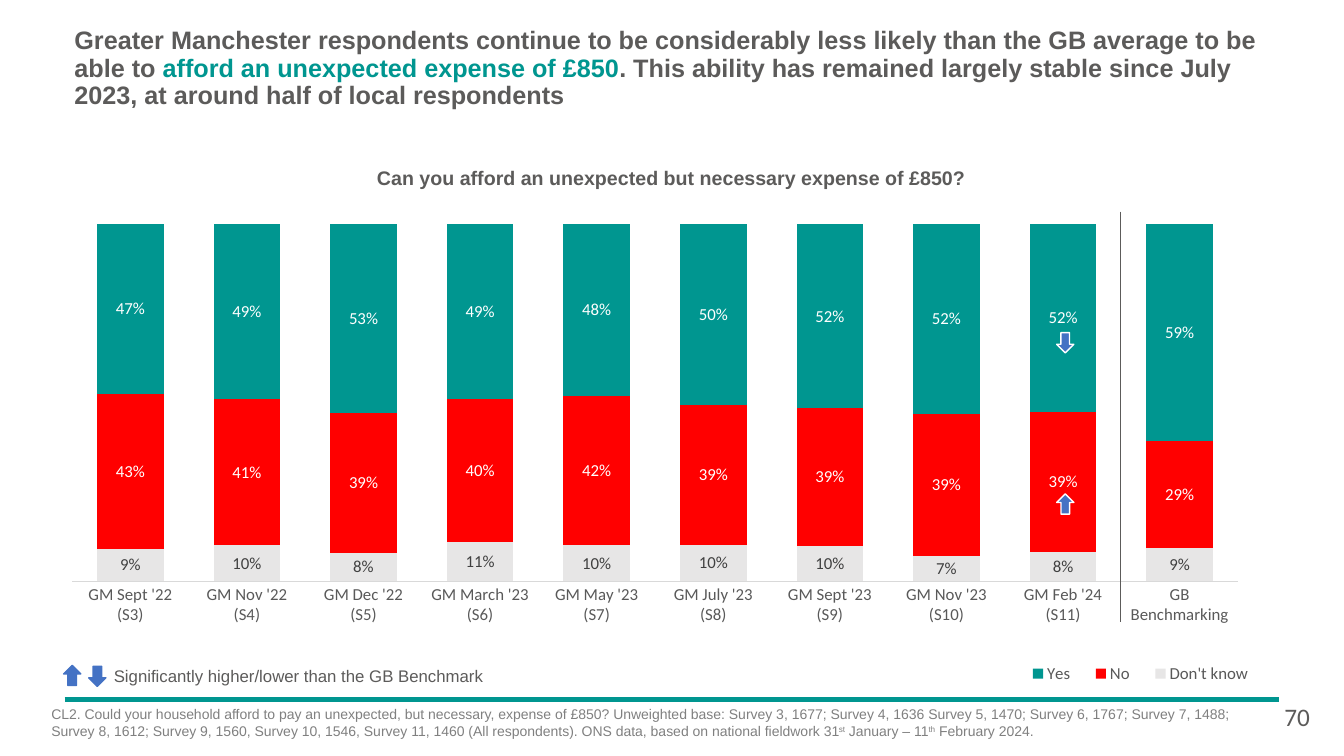
from lxml import etree
from pptx import Presentation
from pptx.chart.data import CategoryChartData
from pptx.dml.color import RGBColor
from pptx.enum.chart import XL_CHART_TYPE, XL_LABEL_POSITION, XL_LEGEND_POSITION, XL_TICK_MARK
from pptx.enum.shapes import MSO_CONNECTOR, MSO_SHAPE
from pptx.enum.text import MSO_ANCHOR, PP_ALIGN
from pptx.oxml import parse_xml
from pptx.oxml.ns import qn
from pptx.util import Inches, Pt

STACKED = XL_CHART_TYPE.COLUMN_STACKED_100
LABEL_CENTER = XL_LABEL_POSITION.CENTER
LEGEND_LEFT = XL_LEGEND_POSITION.LEFT
NO_TICK = XL_TICK_MARK.NONE
STRAIGHT = MSO_CONNECTOR.STRAIGHT
DOWN_ARROW = MSO_SHAPE.DOWN_ARROW
TOP, MIDDLE = MSO_ANCHOR.TOP, MSO_ANCHOR.MIDDLE
LEFT, CENTER = PP_ALIGN.LEFT, PP_ALIGN.CENTER

HEX = {"teal": "009690", "red": "FF0000", "pale": "E7E6E6", "text": "5C5B5A",
       "axis text": "595959", "axis line": "D9D9D9", "dark": "404040",
       "note": "808080", "blue": "4472C4", "white": "FFFFFF"}
COLOR = {name: RGBColor.from_string(value) for name, value in HEX.items()}

prs = Presentation()
prs.slide_width, prs.slide_height = Inches(13.33), Inches(7.5)
slide = prs.slides.add_slide(prs.slide_layouts[6])
shapes = slide.shapes


def share(*percents):
    """Turn alternating x and y percentages of the slide into lengths."""
    sides = (prs.slide_width, prs.slide_height)
    return [int(sides[i % 2] * p / 100) for i, p in enumerate(percents)]


def add_text(area, runs, size, font="Arial", bold=False, align=LEFT,
             anchor=TOP, wrap=True, inset=True, spacing=None):
    """Add a text box; each run is (text, colour name, raised)."""
    frame = shapes.add_textbox(*share(*area)).text_frame
    frame.word_wrap, frame.vertical_anchor = wrap, anchor
    if not inset:
        for side in ("left", "right", "top", "bottom"):
            setattr(frame, f"margin_{side}", 0)
    paragraph = frame.paragraphs[0]
    paragraph.alignment, paragraph.line_spacing = align, spacing
    for text, color, raised in runs:
        run = paragraph.add_run()
        run.text = text
        for key, value in {"name": font, "size": Pt(size), "bold": bold}.items():
            setattr(run.font, key, value)
        run.font.color.rgb = COLOR[color]
        if raised:
            run._r.get_or_add_rPr().set("baseline", "30000")


# Headline and chart question
add_text((4.8, 3.33, 92.42, 11.6), [
    ("Greater Manchester respondents continue to be considerably less likely than "
     "the GB average to be able to ", "text", False),
    ("afford an unexpected expense of £850", "teal", False),
    (". This ability has remained largely stable since July 2023, at around half "
     "of local respondents", "text", False),
], 18, bold=True, anchor=MIDDLE, spacing=0.9)
add_text((13.65, 22, 72.62, 3.2),
         [("Can you afford an unexpected but necessary expense of £850?", "text", False)],
         14, bold=True, align=CENTER, inset=False)

# Stacked chart of answers per survey
waves = ["Sept '22", "Nov '22", "Dec '22", "March '23", "May '23",
         "July '23", "Sept '23", "Nov '23", "Feb '24"]
answers = [
    ("Don't know", "pale", "dark", [9, 10, 8, 11, 10, 10, 10, 7, 8, 9]),
    ("No", "red", "white", [43, 41, 39, 40, 42, 39, 39, 39, 39, 29]),
    ("Yes", "teal", "white", [47, 49, 53, 49, 48, 50, 52, 52, 52, 59]),
]
data = CategoryChartData(number_format="0%")
data.categories = [f"GM {wave}\n(S{number})" for number, wave in enumerate(waves, 3)] + ["GB Benchmarking"]
for answer, _, _, percents in answers:
    data.add_series(answer, [percent / 100 for percent in percents])
chart = shapes.add_chart(STACKED, *share(4.73, 28, 90.55, 64.67), data).chart
chart.has_title = False
chart.font.name, chart.font.size = "Calibri", Pt(10)

plot = chart.plots[0]
plot.gap_width, plot.overlap, plot.vary_by_categories = 75, 100, False
label_format = {"show_value": True, "number_format": "0%",
                "number_format_is_linked": False, "position": LABEL_CENTER}
for series, (_, fill, label_color, _) in zip(plot.series, answers):
    series.format.fill.solid()
    series.format.fill.fore_color.rgb = COLOR[fill]
    labels = series.data_labels
    for key, value in label_format.items():
        setattr(labels, key, value)
    labels.font.name, labels.font.size = "Calibri", Pt(12)
    labels.font.color.rgb = COLOR[label_color]

# Axes and legend
survey_axis, share_axis = chart.category_axis, chart.value_axis
survey_axis.major_tick_mark = survey_axis.minor_tick_mark = NO_TICK
survey_axis.format.line.color.rgb = COLOR["axis line"]
survey_axis.format.line.width = Pt(0.75)
share_axis.visible = share_axis.has_major_gridlines = False
share_axis.minimum_scale, share_axis.maximum_scale = 0, 1
chart.has_legend = True
legend = chart.legend
legend.position, legend.include_in_layout = LEGEND_LEFT, False
for font in (survey_axis.tick_labels.font, legend.font):
    font.name, font.size = "Calibri", Pt(12)
    font.color.rgb = COLOR["axis text"]

# Fixed places for plot area and legend, as shares of the chart
CHART_NS = "http://schemas.openxmlformats.org/drawingml/2006/chart"
plot_area = chart._chartSpace.find(".//" + qn("c:plotArea"))
legend_key = chart._chartSpace.find(".//" + qn("c:legend"))
for part, target, box in ((plot_area, '<c:layoutTarget val="inner"/>', (0.007, 0.026, 0.958, 0.73)),
                          (legend_key, "", (0.78, 0.91, 0.21, 0.07))):
    for old in part.findall(qn("c:layout")):
        part.remove(old)
    sizes = "".join(f'<c:{tag} val="{value}"/>' for tag, value in zip("xywh", box))
    layout = parse_xml(f'<c:layout xmlns:c="{CHART_NS}"><c:manualLayout>{target}'
                       f'<c:xMode val="edge"/><c:yMode val="edge"/>{sizes}'
                       '</c:manualLayout></c:layout>')
    part.insert(0 if part is plot_area else 1, layout)

# Arrows: key below the chart, then marks on the latest survey
for x, y, turn, outline in ((6.6, 88.13, 0, "blue"), (4.73, 88, 180, "blue"),
                            (78.62, 44, 0, "white"), (78.62, 65.33, 180, "white")):
    arrow = shapes.add_shape(DOWN_ARROW, *share(x, y, 1.28, 2.67))
    arrow.rotation, arrow.shadow.inherit = turn, False
    arrow.fill.solid()
    arrow.fill.fore_color.rgb = COLOR["blue"]
    arrow.line.color.rgb, arrow.line.width = COLOR[outline], Pt(1)
add_text((7.73, 87.47, 29.26, 4),
         [("Significantly higher/lower than the GB Benchmark", "text", False)], 12, wrap=False)

# Footer rule and divider before the benchmark
for ends, color, width in (((4.8, 92.53, 95.2, 92.53), "teal", 3),
                           ((83.35, 28, 83.35, 82.27), "text", 0.5)):
    rule = shapes.add_connector(STRAIGHT, *share(*ends))
    rule.line.color.rgb, rule.line.width = COLOR[color], Pt(width)
    etree.SubElement(rule._element.spPr, qn("a:effectLst"))

# Footnote and page number
add_text((3.08, 92.67, 89.87, 7.47), [
    ("CL2. Could your household afford to pay an unexpected, but necessary, expense of £850? "
     "Unweighted base: Survey 3, 1677; Survey 4, 1636 Survey 5, 1470; Survey 6, 1767; "
     "Survey 7, 1488; Survey 8, 1612; Survey 9, 1560, Survey 10, 1546, Survey 11, 1460 "
     "(All respondents). ONS data, based on national fieldwork 31", "note", False),
    ("st", "note", True), (" January – 11", "note", False),
    ("th", "note", True), (" February 2024.", "note", False),
], 10)
add_text((94.82, 92.13, 3.98, 5.33), [("70", "text", False)], 18, font="Calibri")

prs.save("out.pptx")
